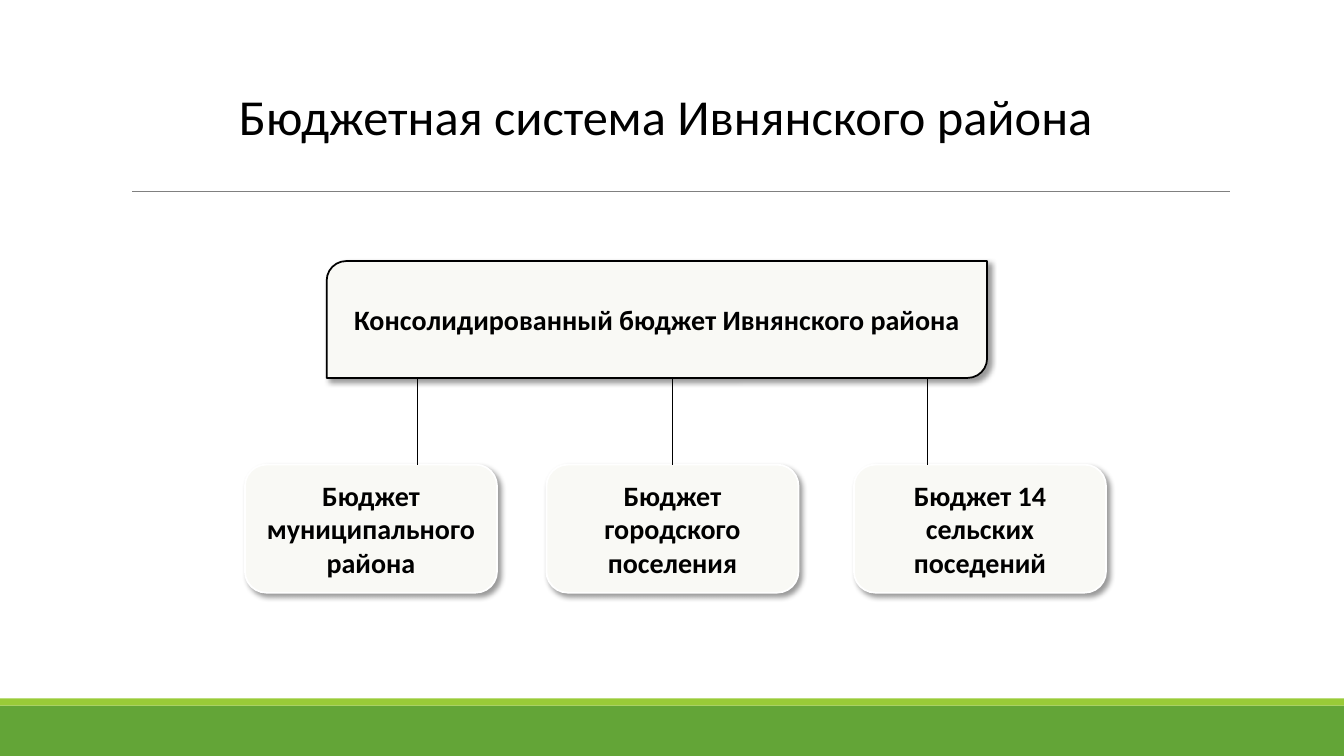
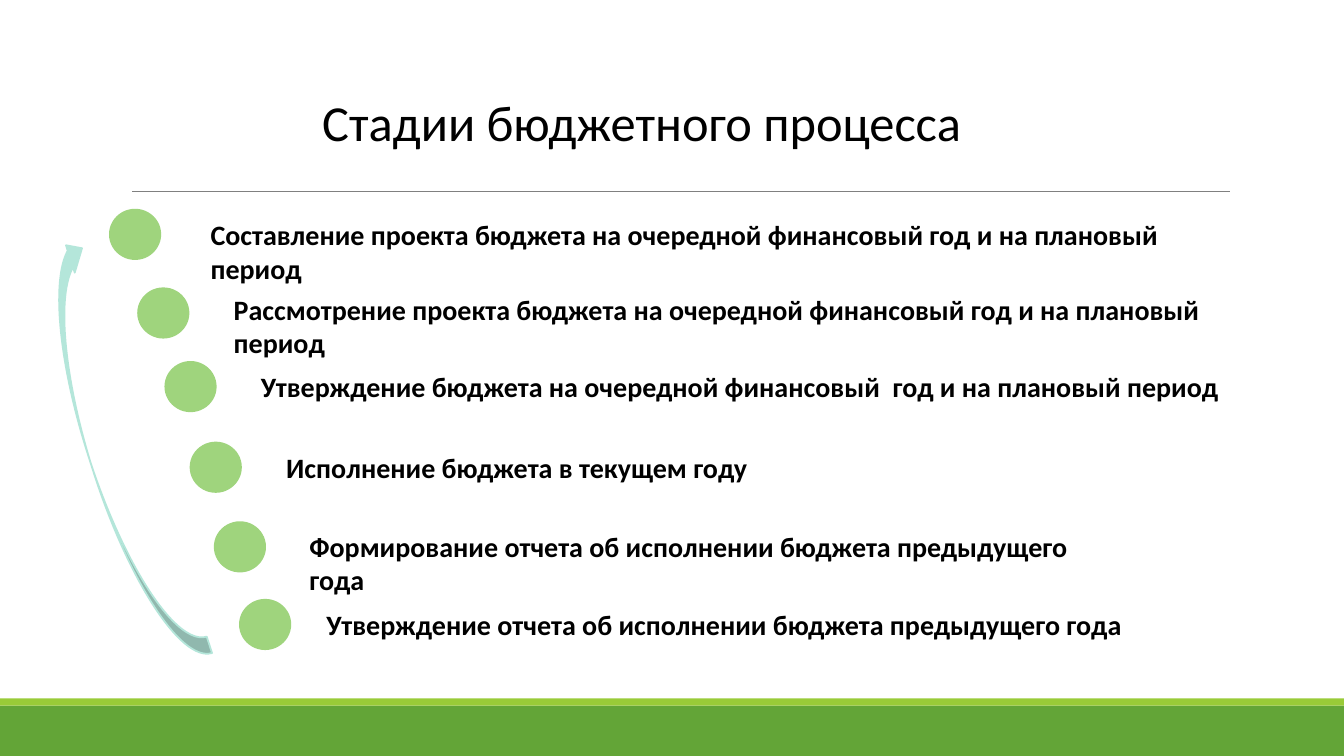
from lxml.etree import SubElement
from pptx import Presentation
from pptx.dml.color import RGBColor
from pptx.enum.shapes import MSO_CONNECTOR, MSO_SHAPE
from pptx.enum.text import MSO_ANCHOR, MSO_AUTO_SIZE, PP_ALIGN
from pptx.oxml.ns import qn
from pptx.util import Pt

PX = 9144  # EMU in one px, 100 px to the inch
WIDE, HIGH = 1333, 750
FONT = "Calibri"
HEX = {
    "ink": "000000", "paper": "FFFFFF", "rule": "808080",
    "band": "63A537", "strip": "99CB38",
    "card": "F9F9F5", "dot": "9FD47D", "arrow": "B4E6DA",
}


def color(name):
    return RGBColor.from_string(HEX[name])


def scale(*sizes):
    return [size * PX for size in sizes]


class Deck:
    def __init__(self):
        self.prs = Presentation()
        self.prs.slide_width, self.prs.slide_height = scale(WIDE, HIGH)
        self.slide = None

    def begin(self, title, box, align):
        """Start a slide with its title, bands and rule."""
        self.slide = self.prs.slides.add_slide(self.prs.slide_layouts[5])
        head = self.slide.shapes.title
        head.left, head.top, head.width, head.height = scale(*box)
        self.style(head, title, 36, align, MSO_ANCHOR.TOP, bold=False)
        self.shape(MSO_SHAPE.RECTANGLE, (0, 700, WIDE, 50), "band")
        self.shape(MSO_SHAPE.RECTANGLE, (0, 693, WIDE, 7), "strip")
        self.line((131, 190), (1220, 190), "rule", 0.5)

    def style(self, shape, text, size, align, anchor, bold=True):
        frame = shape.text_frame
        frame.text = text
        frame.word_wrap = True
        frame.auto_size = MSO_AUTO_SIZE.NONE
        frame.vertical_anchor = anchor
        for para in frame.paragraphs:
            para.alignment = align
            for run in para.runs:
                run.font.name, run.font.size = FONT, Pt(size)
                run.font.bold = bold
                run.font.color.rgb = color("ink")

    def shape(self, kind, box, fill, edge=None):
        shape = self.slide.shapes.add_shape(kind, *scale(*box))
        shape.shadow.inherit = False
        shape.fill.solid()
        shape.fill.fore_color.rgb = color(fill)
        if edge:
            shape.line.color.rgb = color(edge)
            shape.line.width = Pt(1.25)
        else:
            shape.line.fill.background()
        return shape

    def card(self, kind, box, text, edge):
        """Draw a centred label on a plate with a soft shadow."""
        card = self.shape(kind, box, "card", edge)
        self.style(card, text, 20, PP_ALIGN.CENTER, MSO_ANCHOR.MIDDLE)
        effects = card.element.spPr.find(qn("a:effectLst"))
        shade = SubElement(effects, qn("a:outerShdw"), blurRad=str(Pt(4)),
                           dist=str(Pt(3)), dir="2700000", rotWithShape="0")
        tint = SubElement(shade, qn("a:srgbClr"), val=HEX["ink"])
        SubElement(tint, qn("a:alpha"), val="40000")
        return card

    def label(self, box, text):
        label = self.slide.shapes.add_textbox(*scale(*box))
        self.style(label, text, 20, PP_ALIGN.LEFT, MSO_ANCHOR.TOP)

    def line(self, start, end, ink, width):
        line = self.slide.shapes.add_connector(
            MSO_CONNECTOR.STRAIGHT, *scale(*start, *end))
        line.line.color.rgb = color(ink)
        line.line.width = Pt(width)
        SubElement(line.element.spPr, qn("a:effectLst"))
        return line


def budget(deck):
    deck.begin("Бюджетная система Ивнянского района",
               (227, 79, 894, 71), PP_ALIGN.LEFT)

    # Consolidated budget
    deck.card(MSO_SHAPE.ROUND_2_DIAG_RECTANGLE, (324, 259, 655, 116),
              "Консолидированный бюджет Ивнянского района", "ink")

    # Its three parts, each on a stem
    wide, foot, top = 250, 375, 461
    parts = [
        (243, "Бюджет муниципального района"),
        (542, "Бюджет городского поселения"),
        (847, "Бюджет 14 сельских поседений"),
    ]
    cards = [deck.card(MSO_SHAPE.ROUNDED_RECTANGLE, (left, top, wide, 127),
                       text, "paper") for left, text in parts]
    for i, card in enumerate(cards):
        x = 414 + 253 * i
        stem = deck.line((x, foot), (x, top), "ink", 1.25)
        if x == parts[i][0] + wide // 2:
            stem.end_connect(card, 0)


def stages(deck):
    deck.begin("Стадии бюджетного процесса",
               (172, 85, 929, 71), PP_ALIGN.CENTER)

    # Arrow from the last stage back to the first
    arrow = deck.shape(MSO_SHAPE.CURVED_LEFT_ARROW, (88, 231, 57, 436),
                       "arrow", "arrow")
    arrow.rotation = 162.2
    arrow.adjustments[0] = 0.3

    # Stages: dot left and top, label left, top and width
    rows = [
        (109, 208, 199, 211, 1048, "Составление проекта бюджета на "
         "очередной финансовый год и на плановый период"),
        (137, 286, 222, 285, 1030, "Рассмотрение проекта бюджета на "
         "очередной финансовый год и на плановый период"),
        (164, 359, 249, 362, 976, "Утверждение бюджета на очередной "
         "финансовый  год и на плановый период"),
        (189, 439, 274, 442, 569, "Исполнение бюджета в текущем году"),
        (213, 518, 297, 520, 817, "Формирование отчета об исполнении "
         "бюджета предыдущего года"),
        (238, 595, 314, 598, 817, "Утверждение отчета об исполнении "
         "бюджета предыдущего года"),
    ]
    for x, y, left, top, wide, text in rows:
        deck.shape(MSO_SHAPE.OVAL, (x, y, 50, 49), "dot", "dot")
        deck.label((left, top, wide, 44), text)


def main():
    deck = Deck()
    budget(deck)
    stages(deck)
    deck.prs.save("out.pptx")


if __name__ == "__main__":
    main()
